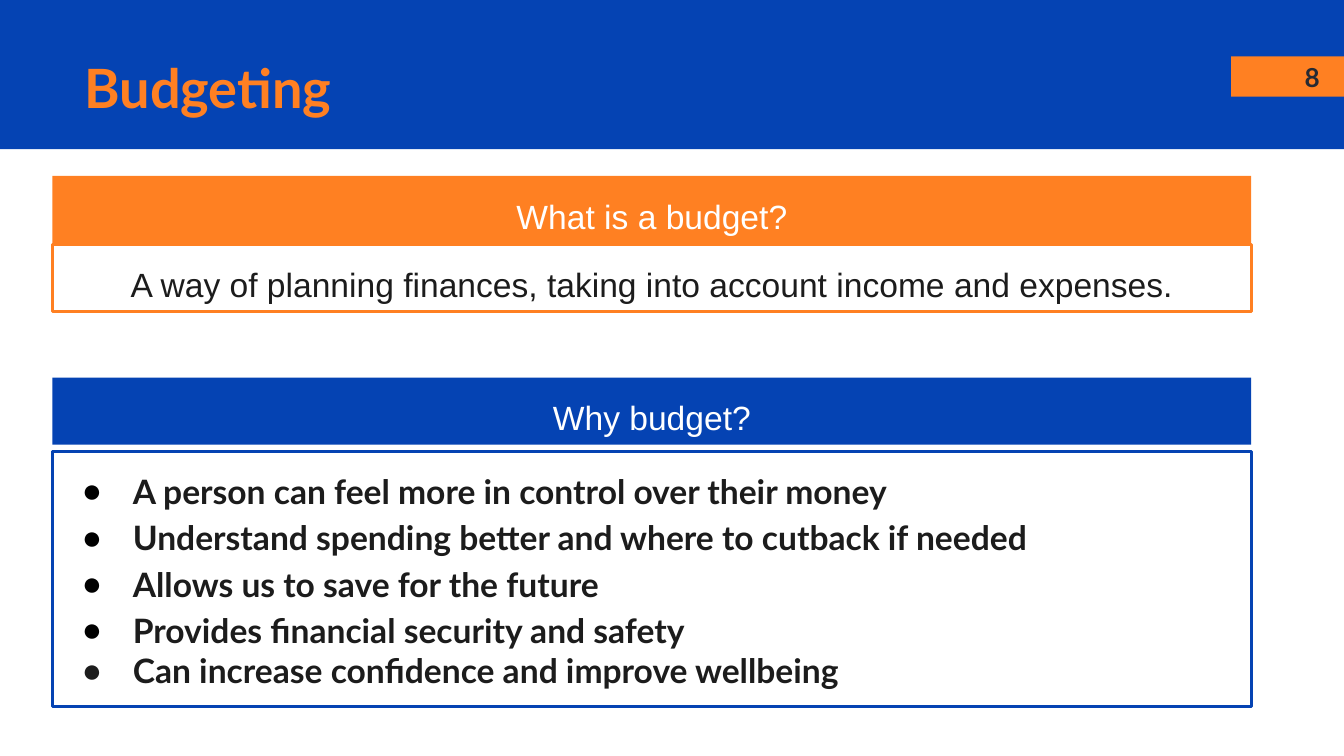
from dataclasses import dataclass

from lxml.etree import SubElement
from pptx import Presentation
from pptx.dml.color import RGBColor
from pptx.enum.shapes import MSO_SHAPE
from pptx.enum.text import MSO_ANCHOR, MSO_AUTO_SIZE, PP_ALIGN
from pptx.oxml.ns import qn
from pptx.util import Inches, Pt


@dataclass(frozen=True)
class Theme:
    blue: str = "0543B3"
    orange: str = "FF8022"
    white: str = "FFFFFF"
    ink: str = "1C1C1C"
    slate: str = "262A33"
    black: str = "000000"
    heading_font: str = "Lato"
    body_font: str = "Arial"
    title_size: int = 29
    body_size: int = 18
    number_size: int = 14
    border: float = 1.5


theme = Theme()


def add_rectangle(left, top, width, height, fill=None, line=None):
    shape = slide.shapes.add_shape(
        MSO_SHAPE.RECTANGLE, Inches(left), Inches(top), Inches(width), Inches(height)
    )
    shape.shadow.inherit = False
    if fill:
        shape.fill.solid()
        shape.fill.fore_color.rgb = RGBColor.from_string(fill)
    else:
        shape.fill.background()
    if line:
        shape.line.color.rgb = RGBColor.from_string(line)
        shape.line.width = Pt(theme.border)
    else:
        shape.line.fill.background()
    return shape


def write_text(shape, lines, size=theme.body_size, font=theme.body_font,
               color=theme.ink, bold=False, align=PP_ALIGN.LEFT, spacing=1.15,
               anchor=MSO_ANCHOR.TOP, inset_top=0.1, grow=True, bullet_colors=()):
    frame = shape.text_frame
    frame.word_wrap = True
    frame.auto_size = MSO_AUTO_SIZE.SHAPE_TO_FIT_TEXT if grow else MSO_AUTO_SIZE.NONE
    frame.vertical_anchor = anchor
    frame.margin_left = frame.margin_right = frame.margin_bottom = Inches(0.1)
    frame.margin_top = Inches(inset_top)
    frame.text = "\n".join(lines)
    for paragraph in frame.paragraphs:
        paragraph.alignment = align
        paragraph.line_spacing = spacing
    for paragraph, bullet_color in zip(frame.paragraphs, bullet_colors):
        properties = paragraph._p.get_or_add_pPr()
        properties.set("marL", str(Inches(0.5)))
        properties.set("indent", str(Inches(-0.38)))
        color_choice = SubElement(properties, qn("a:buClr"))
        SubElement(color_choice, qn("a:srgbClr"), val=bullet_color)
        SubElement(properties, qn("a:buFont"), typeface=theme.body_font)
        SubElement(properties, qn("a:buChar"), char="●")
    for paragraph in frame.paragraphs:
        for run in paragraph.runs:
            run.font.size = Pt(size)
            run.font.name = font
            run.font.bold = bold
            run.font.color.rgb = RGBColor.from_string(color)


presentation = Presentation()
presentation.slide_width = Inches(10)
presentation.slide_height = Inches(10 * 9 / 16)
slide = presentation.slides.add_slide(presentation.slide_layouts[6])

add_rectangle(0, 0, 10, 1.11, fill=theme.blue)
add_rectangle(9.16, 0.42, 0.84, 0.3, fill=theme.orange)

page_number = slide.shapes.add_textbox(Inches(9.16), Inches(0.44), Inches(0.76), Inches(0.27))
write_text(page_number, ["8"], size=theme.number_size, font=theme.heading_font,
           color=theme.slate, bold=True, align=PP_ALIGN.RIGHT, spacing=1.0,
           anchor=MSO_ANCHOR.MIDDLE, grow=False)

title = slide.shapes.add_textbox(Inches(0.53), Inches(0.18), Inches(8.34), Inches(0.74))
write_text(title, ["Budgeting"], size=theme.title_size, font=theme.heading_font,
           color=theme.orange, bold=True, inset_top=0.15)

panel_left, panel_width, bar_height = 0.39, 8.92, 0.5

reasons = [
    "A person can feel more in control over their money",
    "Understand spending better and where to cutback if needed",
    "Allows us to save for the future",
    "Provides financial security and safety",
    "Can increase confidence and improve wellbeing",
]
reasons_panel = add_rectangle(panel_left, 3.36, panel_width, 1.9,
                              fill=theme.white, line=theme.blue)
write_text(reasons_panel, reasons, font=theme.heading_font, bold=True,
           bullet_colors=[theme.black] * 4 + [theme.ink])
reasons_panel.text_frame.paragraphs[-1].line_spacing = 1.0

bars = [
    (1.31, "What is a budget?", theme.orange, None, theme.white),
    (1.82, "A way of planning finances, taking into account income and expenses.",
     None, theme.orange, theme.ink),
    (2.81, "Why budget?", theme.blue, None, theme.white),
]
for top, text, fill, line, color in bars:
    bar = add_rectangle(panel_left, top, panel_width, bar_height, fill=fill, line=line)
    write_text(bar, [text], color=color, align=PP_ALIGN.CENTER)

presentation.save("out.pptx")
